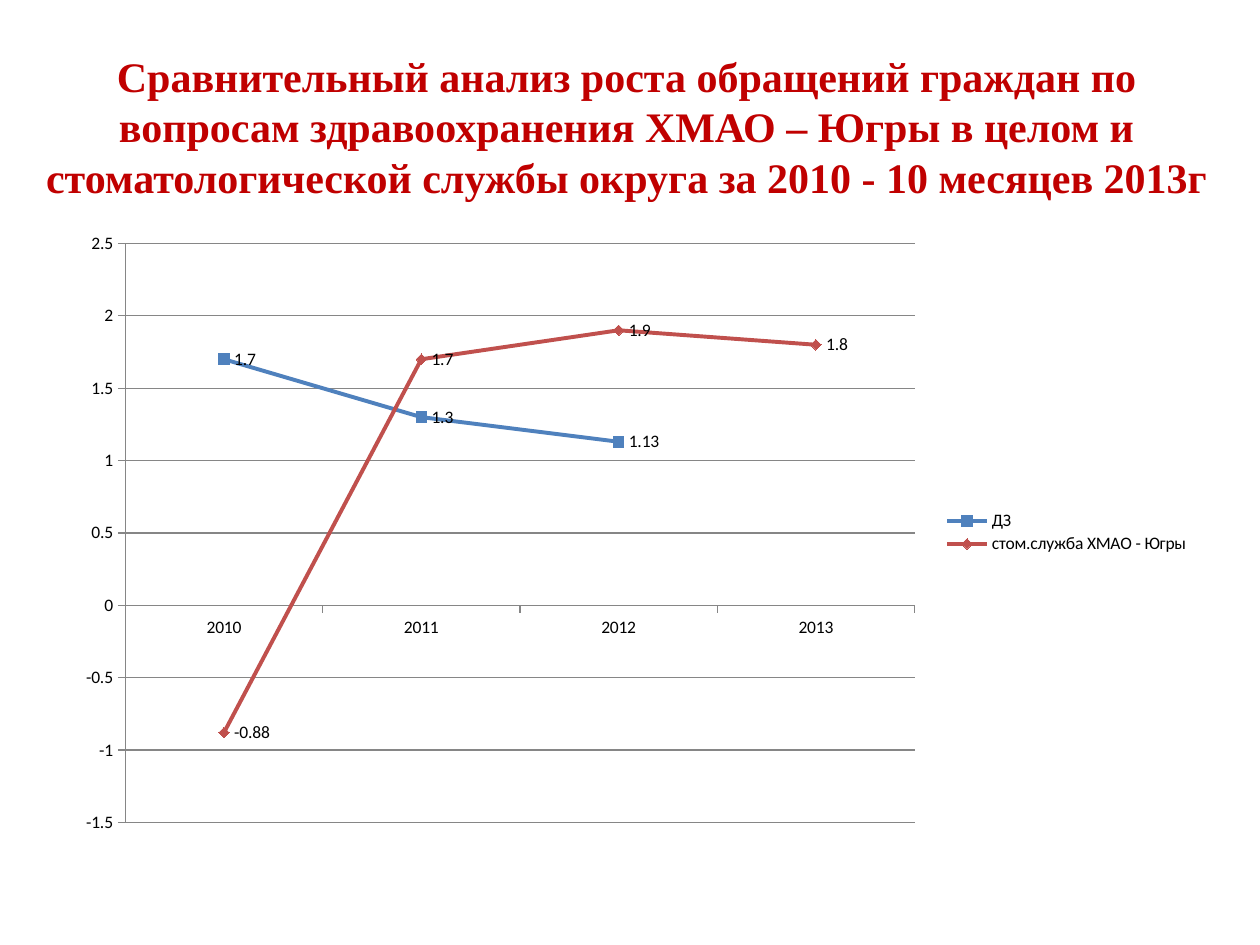
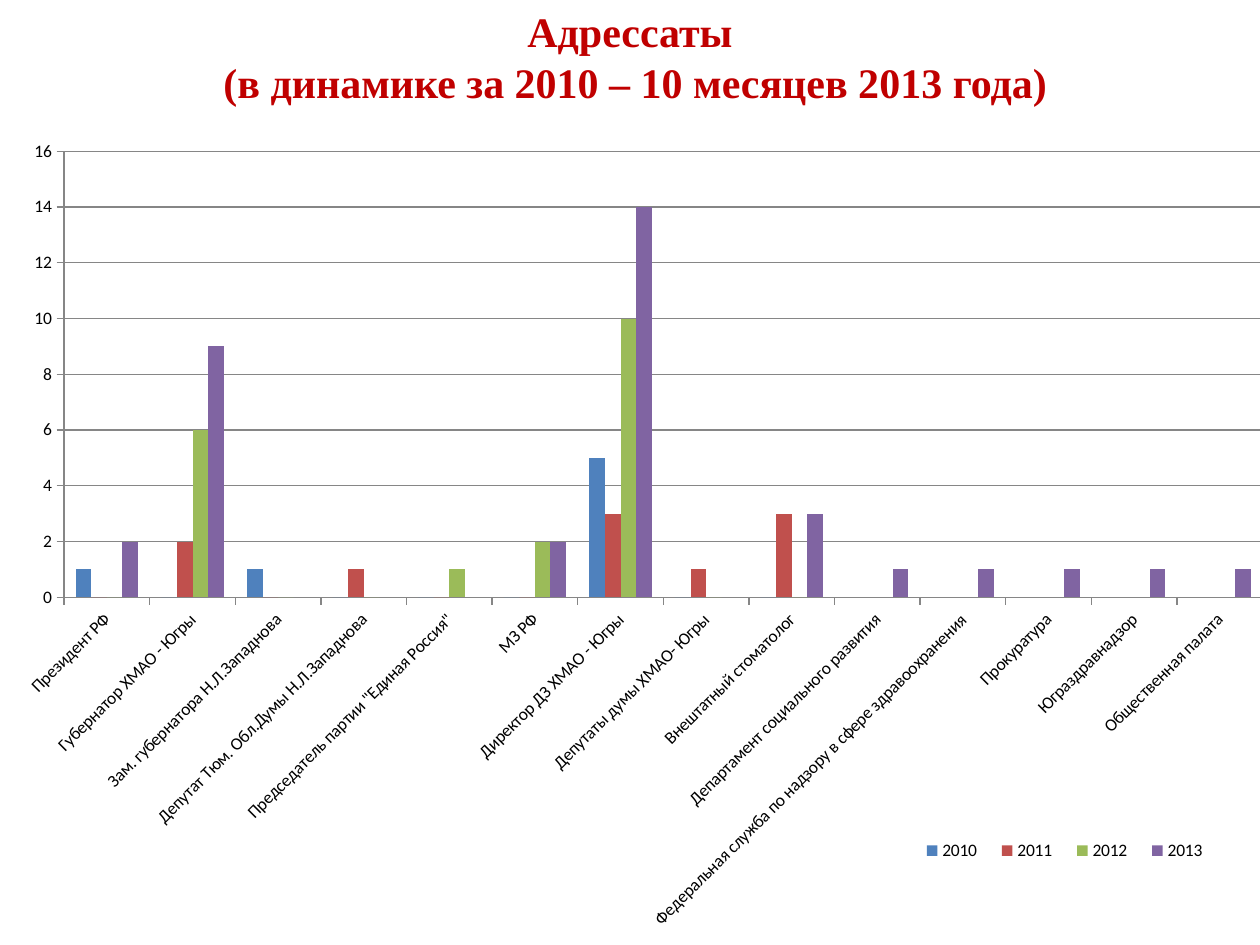
from lxml import etree
from pptx import Presentation
from pptx.chart.data import CategoryChartData
from pptx.dml.color import RGBColor
from pptx.enum.chart import (XL_CHART_TYPE, XL_LABEL_POSITION, XL_LEGEND_POSITION,
                             XL_MARKER_STYLE, XL_TICK_MARK)
from pptx.enum.text import MSO_ANCHOR, MSO_AUTO_SIZE, PP_ALIGN
from pptx.oxml.ns import qn
from pptx.util import Pt

LINE, COLUMNS = XL_CHART_TYPE.LINE_MARKERS, XL_CHART_TYPE.COLUMN_CLUSTERED
RIGHT, BOTTOM = XL_LEGEND_POSITION.RIGHT, XL_LEGEND_POSITION.BOTTOM
LABEL_RIGHT = XL_LABEL_POSITION.RIGHT
MARKERS = [XL_MARKER_STYLE.SQUARE, XL_MARKER_STYLE.DIAMOND]
TICK_OUT = XL_TICK_MARK.OUTSIDE
MIDDLE, CENTER, NO_AUTOFIT = MSO_ANCHOR.MIDDLE, PP_ALIGN.CENTER, MSO_AUTO_SIZE.NONE

TITLE_COLOR, TEXT_COLOR, AXIS_COLOR = "C00000", "000000", "868686"
SERIES_COLORS = ["4F81BD", "C0504D", "9BBB59", "8064A2"]
TITLE_FONT, CHART_FONT = "Times New Roman", "Calibri"


def color(target, value):
    if hasattr(target, "solid"):
        target.solid()
        target = target.fore_color
    target.rgb = RGBColor.from_string(value)


def set_layout(parent, index, box, inner=False):
    for old in parent.findall(qn("c:layout")):
        parent.remove(old)
    layout = etree.Element(qn("c:layout"))
    manual = etree.SubElement(layout, qn("c:manualLayout"))
    entries = [("layoutTarget", "inner")] if inner else []
    entries += [("xMode", "edge"), ("yMode", "edge")]
    entries += zip("xywh", box)
    for name, value in entries:
        etree.SubElement(manual, qn("c:" + name)).set("val", str(value))
    parent.insert(index, layout)


SLIDES = [
    {
        "title": ["Сравнительный анализ роста обращений граждан по вопросам "
                  "здравоохранения ХМАО – Югры в целом и стоматологической службы "
                  "округа за 2010 - 10 месяцев 2013г"],
        "title_box": (9, 22, 698, 100),
        "type": LINE,
        "chart_box": (36, 126, 648, 356.5),
        "plot_layout": (0.055, 0.037, 0.696, 0.928),
        "legend": RIGHT,
        "legend_layout": (0.77, 0.46, 0.23, 0.08),
        "scale": (-1.5, 2.5, 0.5),
        "categories": ["2010", "2011", "2012", "2013"],
        "series": {
            "ДЗ": [1.7, 1.3, 1.13, None],
            "стом.служба ХМАО - Югры": [-0.88, 1.7, 1.9, 1.8],
        },
    },
    {
        "title": ["Адрессаты", " (в динамике за 2010 – 10 месяцев 2013 года)"],
        "title_box": (36, 9.5, 648, 45),
        "type": COLUMNS,
        "chart_box": (0, 71.5, 780, 468.5),
        "plot_layout": (0.047, 0.032, 0.878, 0.544),
        "legend": BOTTOM,
        "legend_layout": (0.665, 0.86, 0.23, 0.05),
        "scale": (0, 16, 2),
        "categories": [
            "Президент РФ", "Губернатор ХМАО - Югры", "Зам. губернатора Н.Л.Западнова",
            "Депутат Тюм. Обл.Думы Н.Л.Западнова",
            "Председатель партии \"Единая Россия\"", "МЗ РФ",
            "Директор ДЗ ХМАО - Югры", "Депутаты думы ХМАО- Югры",
            "Внештатный стоматолог", "Департамент социального развития",
            "Федеральная служба по надзору в сфере здравоохранения",
            "Прокуратура", "Юграздравнадзор", "Общественная палата",
        ],
        "series": {
            "2010": [1, 0, 1, 0, 0, 0, 5, 0, 0] + [None] * 5,
            "2011": [0, 2, 0, 1, 0, 0, 3, 1, 3] + [None] * 5,
            "2012": [0, 6, 0, 0, 1, 2, 10, 0, 0] + [None] * 5,
            "2013": [2, 9, None, None, None, 2, 14, None, 3, 1, 1, 1, 1, 1],
        },
    },
]

presentation = Presentation()
presentation.slide_width, presentation.slide_height = Pt(720), Pt(540)
title_only = presentation.slide_layouts[5]

for content in SLIDES:
    slide = presentation.slides.add_slide(title_only)
    title = slide.shapes.title
    title.left, title.top, title.width, title.height = map(Pt, content["title_box"])
    title.text_frame.auto_size = NO_AUTOFIT
    title.text_frame.word_wrap = True
    title.text_frame.vertical_anchor = MIDDLE
    paragraph = title.text_frame.paragraphs[0]
    paragraph.alignment = CENTER
    for number, line in enumerate(content["title"]):
        if number:
            paragraph.add_line_break()
        run = paragraph.add_run()
        run.text = line
        run.font.name, run.font.size, run.font.bold = TITLE_FONT, Pt(24), True
        color(run.font.color, TITLE_COLOR)

    chart_data = CategoryChartData()
    chart_data.categories = content["categories"]
    for name, values in content["series"].items():
        chart_data.add_series(name, values)
    chart = slide.shapes.add_chart(
        content["type"], *map(Pt, content["chart_box"]), chart_data).chart
    chart.has_title = False
    chart.font.name, chart.font.size = CHART_FONT, Pt(10)
    color(chart.font.color, TEXT_COLOR)

    chart.has_legend = True
    chart.legend.position = content["legend"]
    chart.legend.include_in_layout = False
    set_layout(chart.legend._element, 1, content["legend_layout"])
    plot_area = chart._chartSpace.chart.plotArea
    set_layout(plot_area, 0, content["plot_layout"], inner=True)

    value_axis, category_axis = chart.value_axis, chart.category_axis
    value_axis.minimum_scale, value_axis.maximum_scale, value_axis.major_unit = content["scale"]
    value_axis.has_major_gridlines = True
    for axis in (value_axis, category_axis):
        axis.major_tick_mark = TICK_OUT
    for axis_line in (value_axis.format.line, category_axis.format.line,
                      value_axis.major_gridlines.format.line):
        axis_line.width = Pt(0.75)
        color(axis_line.fill, AXIS_COLOR)

    plot = chart.plots[0]
    plot.vary_by_categories = False
    if content["type"] == COLUMNS:
        plot.gap_width, plot.overlap = 150, 0
        category_axis.tick_labels.font.size = Pt(10)
        body = category_axis._element.find(qn("c:txPr")).find(qn("a:bodyPr"))
        body.set("rot", "-2700000")
        body.set("vert", "horz")
    else:
        plot.has_data_labels = True
        plot.data_labels.show_value = True
        plot.data_labels.position = LABEL_RIGHT

    for number, series in enumerate(plot.series):
        series_color = SERIES_COLORS[number]
        if content["type"] == COLUMNS:
            color(series.format.fill, series_color)
            continue
        series.smooth = False
        series.format.line.width = Pt(2.25)
        color(series.format.line.fill, series_color)
        series.marker.style, series.marker.size = MARKERS[number], 6
        color(series.marker.format.fill, series_color)
        color(series.marker.format.line.fill, series_color)

presentation.save("out.pptx")
